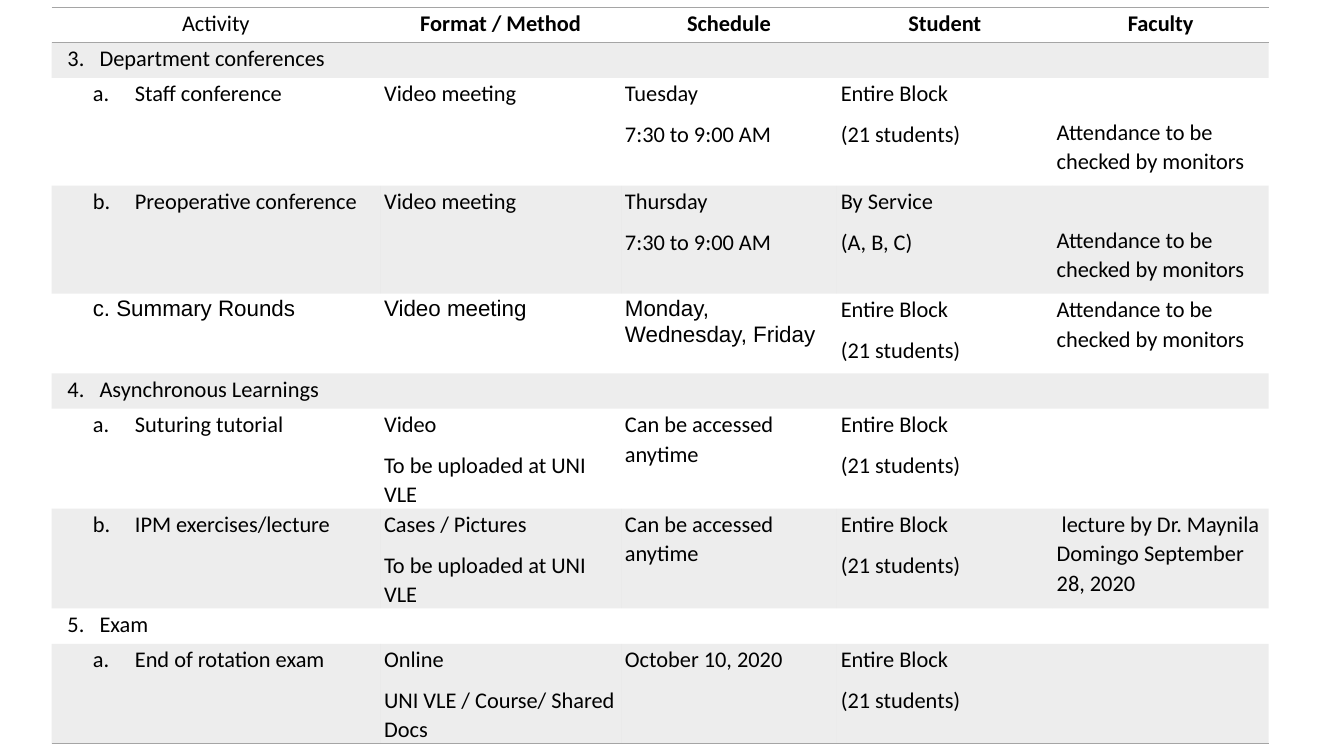
import pptx
import pptx.dml.color
import pptx.enum.text
import pptx.oxml
import pptx.oxml.ns
import pptx.util

Cm = pptx.util.Cm
Pt = pptx.util.Pt
ALIGN = pptx.enum.text.PP_ALIGN
NS = pptx.oxml.ns.nsdecls("a")
GREY = "A5A5A5"
NO_STYLE = "{2D5ABB26-0587-4C30-8999-92F81FD0307C}"


def color(value):
    return pptx.dml.color.RGBColor.from_string(value)


def add_border(cell, side):
    """Draw a 1 pt grey line on one side of a cell: T or B."""
    ln = pptx.oxml.parse_xml(
        f'<a:ln{side} {NS} w="12700"><a:solidFill><a:srgbClr val="{GREY}"/>'
        f'</a:solidFill></a:ln{side}>')
    tcPr = cell._tc.get_or_add_tcPr()
    tcPr.insert(len(tcPr.findall(pptx.oxml.ns.qn("a:lnT"))), ln)


col_widths = [8.28, 6.07, 5.44, 5.44, 5.44]
block = "Entire Block\n(21 students)"
monitors = "Attendance to be checked by monitors"
upload = "To be uploaded at UNI VLE"
anytime = "Can be accessed anytime"
meeting = "Video meeting"

# Each row: height in cm, then its cells; a single cell is a section heading
rows = [
    (0.89, ["Activity", "Format / Method", "Schedule", "Student", "Faculty"]),
    (0.89, ["3.\tDepartment conferences"]),
    (2.72, ["a.\tStaff conference", meeting, "Tuesday\n7:30 to 9:00 AM", block, monitors]),
    (2.72, ["b.\tPreoperative conference", meeting, "Thursday\n7:30 to 9:00 AM",
            "By Service\n(A, B, C)", monitors]),
    (2.01, ["c. Summary Rounds", meeting, "Monday, Wednesday, Friday", block, monitors]),
    (0.89, ["4.\tAsynchronous Learnings"]),
    (2.08, ["a.\tSuturing tutorial", "Video\n" + upload, anytime, block, ""]),
    (2.08, ["b.\tIPM exercises/lecture", "Cases / Pictures\n" + upload, anytime, block,
            " lecture by Dr. Maynila Domingo September 28, 2020"]),
    (0.89, ["5.\tExam"]),
    (2.08, ["a.\tEnd of rotation exam", "Online\nUNI VLE / Course/ Shared Docs",
            "October 10, 2020", block, ""]),
]
header_row, summary_row, last_row = 0, 4, len(rows) - 1
shaded_rows = {1, 3, 5, 7, 9}
lowered_rows = {2, 3}  # the faculty note starts one line down

prs = pptx.Presentation()
prs.slide_width, prs.slide_height = Cm(33.87), Cm(19.05)
s = prs.slides.add_slide(prs.slide_layouts[6])

frame = s.shapes.add_table(len(rows), len(col_widths), Cm(1.3), Cm(0.18),
                           Cm(sum(col_widths)), Cm(sum(h for h, _ in rows)))
table = frame.table
table.first_row = table.horz_banding = False
table._tbl.tblPr.find(pptx.oxml.ns.qn("a:tableStyleId")).text = NO_STYLE
for col, width in zip(table.columns, col_widths):
    col.width = Cm(width)

for i, (height, texts) in enumerate(rows):
    table.rows[i].height = Cm(height)
    is_section = len(texts) == 1
    if is_section:
        table.cell(i, 0).merge(table.cell(i, len(col_widths) - 1))
    for j, text in enumerate(texts):
        cell = table.cell(i, j)
        lowered = j == 4 and i in lowered_rows
        margins = {"margin_left": 0.1, "margin_right": 0.1, "margin_bottom": 0,
                   "margin_top": 0.99 if lowered else 0.02}
        for name, value in margins.items():
            setattr(cell, name, Cm(value))

        if i in shaded_rows:
            cell.fill.solid()
            cell.fill.fore_color.rgb = color(GREY)
            clr = cell._tc.tcPr.find(".//" + pptx.oxml.ns.qn("a:srgbClr"))
            clr.append(pptx.oxml.parse_xml(f'<a:alpha {NS} val="20000"/>'))
        if i == header_row:
            add_border(cell, "T")
        if i in (header_row, last_row):
            add_border(cell, "B")

        tf = cell.text_frame
        tf.text = text
        for p in tf.paragraphs:
            p.line_spacing = 1.07
            p.space_after = Pt(8)
            p.alignment = ALIGN.CENTER if i == header_row else ALIGN.LEFT
            if j == 0 and i != header_row:
                start, hang = (0.3, 0.81) if is_section else (0.94, 1.06)
                if "\t" not in text:
                    hang = 0
                pPr = p._p.get_or_add_pPr()
                pPr.set("marL", str(Cm(start + hang)))
                pPr.set("indent", str(-Cm(hang)))
            font = {"size": Pt(16), "bold": i == header_row and j > 0,
                    "name": "Arial" if i == summary_row and j < 3 else "Calibri"}
            for r in p.runs:
                for name, value in font.items():
                    setattr(r.font, name, value)
                r.font.color.rgb = color("000000")

prs.save("out.pptx")
